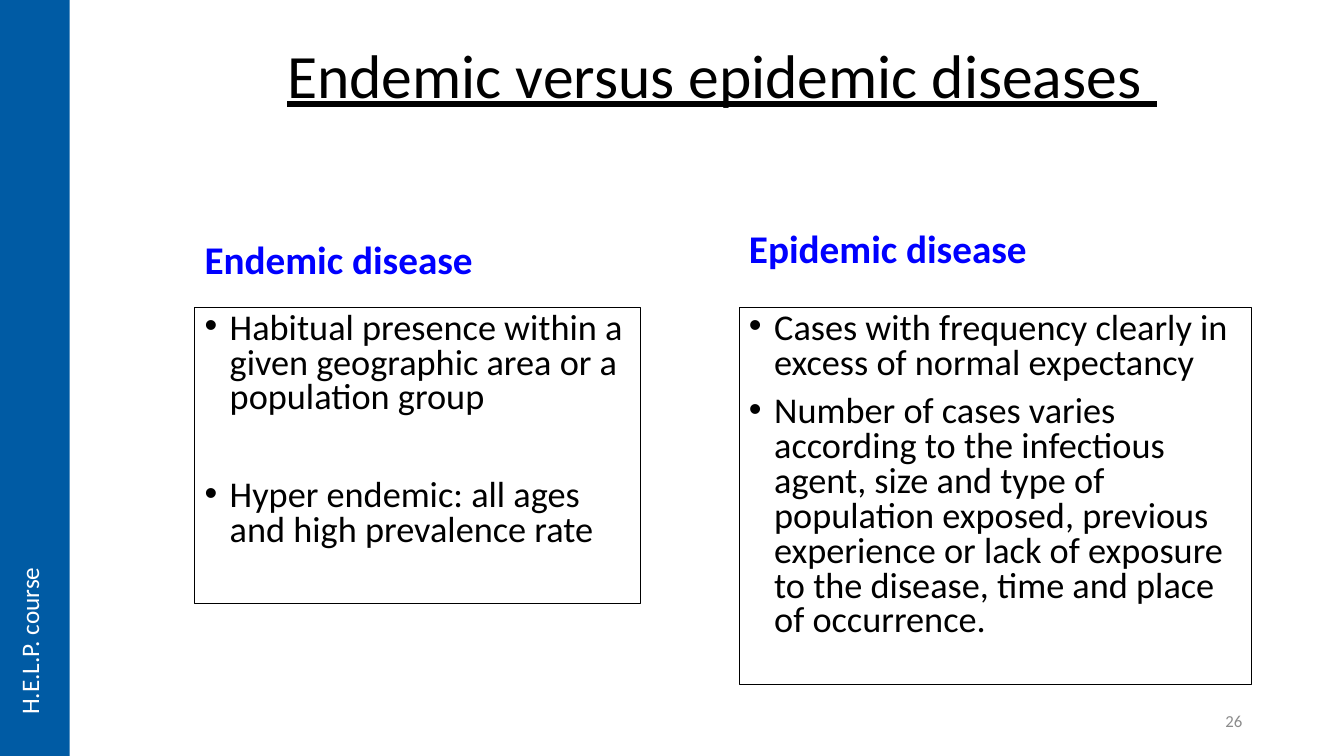
from lxml import etree
from pptx import Presentation
from pptx.dml.color import RGBColor
from pptx.enum.shapes import MSO_SHAPE
from pptx.enum.text import MSO_ANCHOR, PP_ALIGN
from pptx.oxml.ns import qn
from pptx.util import Emu, Pt

RECT = MSO_SHAPE.RECTANGLE
TOP, MIDDLE, BOTTOM = MSO_ANCHOR.TOP, MSO_ANCHOR.MIDDLE, MSO_ANCHOR.BOTTOM
LEFT, RIGHT = PP_ALIGN.LEFT, PP_ALIGN.RIGHT
PX = 9144
COLORS = {"text": "000000", "heading": "0000FF", "band": "005BA4",
          "white": "FFFFFF", "number": "8C8C8C"}


class SlideBuilder:
    """Draws styled elements on one slide, measured in px (100 to the inch)."""

    font = "Calibri"

    def __init__(self, prs):
        self.slide = prs.slides.add_slide(prs.slide_layouts[6])

    def color(self, name):
        return RGBColor.from_string(COLORS[name])

    def rect(self, box, fill=None, line=None):
        sp = self.slide.shapes.add_shape(RECT, *(Emu(v * PX) for v in box))
        sp.shadow.inherit = False
        if fill:
            sp.fill.solid()
            sp.fill.fore_color.rgb = self.color(fill)
        else:
            sp.fill.background()
        if line:
            sp.line.color.rgb = self.color(line)
            sp.line.width = Pt(0.75)
        else:
            sp.line.fill.background()
        return sp

    def add_text(self, p, text, size, color="text", **fmt):
        r = p.add_run()
        r.text = text
        r.font.color.rgb = self.color(color)
        for key, value in {"name": self.font, "size": Pt(size), **fmt}.items():
            setattr(r.font, key, value)

    def label(self, box, text, size, color="text", anchor=MIDDLE, align=LEFT,
              spacing=1.0, vert=None, **fmt):
        sp = self.slide.shapes.add_textbox(*(Emu(v * PX) for v in box))
        tf = sp.text_frame
        tf.word_wrap = vert is None
        tf.vertical_anchor = anchor
        if vert:
            sp.element.txBody.bodyPr.set("vert", vert)
        p = tf.paragraphs[0]
        p.alignment = align
        p.line_spacing = spacing
        self.add_text(p, text, size, color, **fmt)

    def bullets(self, box, items, gap):
        tf = self.rect(box, line="text").text_frame
        tf.word_wrap = True
        tf.vertical_anchor = TOP
        for i, text in enumerate(items):
            p = tf.add_paragraph() if i else tf.paragraphs[0]
            p.alignment = LEFT
            p.line_spacing = 0.8
            p.space_before = Pt(gap if i else 0)
            pPr = p._p.get_or_add_pPr()
            pPr.set("marL", str(25 * PX))
            pPr.set("indent", str(-25 * PX))
            etree.SubElement(pPr, qn("a:buFont")).set("typeface", "Arial")
            etree.SubElement(pPr, qn("a:buChar")).set("char", "•")
            self.add_text(p, text, 25.9)


def main():
    prs = Presentation()
    prs.slide_width, prs.slide_height = Emu(1333 * PX), Emu(750 * PX)
    s = SlideBuilder(prs)

    s.label((275, 15, 900, 125), "Endemic versus epidemic diseases ", 44,
            spacing=0.9, underline=True)

    columns = [
        (193, 216, 442, 294, 45, "Endemic disease", [
            "Habitual presence within a given geographic area or a population group",
            "Hyper endemic: all ages and high prevalence rate"]),
        (733, 205, 508, 374, 10, "Epidemic disease", [
            "Cases with frequency clearly in excess of normal expectancy",
            "Number of cases varies according to the infectious agent, size and "
            "type of population exposed, previous experience or lack of exposure "
            "to the disease, time and place of occurrence."]),
    ]
    for x, y, width, height, gap, heading, items in columns:
        s.label((x, y, 442, 70), heading, 28, "heading", BOTTOM,
                spacing=0.9, bold=True)
        s.bullets((x, 305, width, height), items, gap)

    s.rect((0, 0, 69, 750), fill="band")
    s.label((9, 561, 50, 158), "H.E.L.P. course", 18, "white", TOP, vert="vert270")
    s.label((942, 695, 300, 40), "26", 12, "number", align=RIGHT)
    prs.save("out.pptx")


if __name__ == "__main__":
    main()
